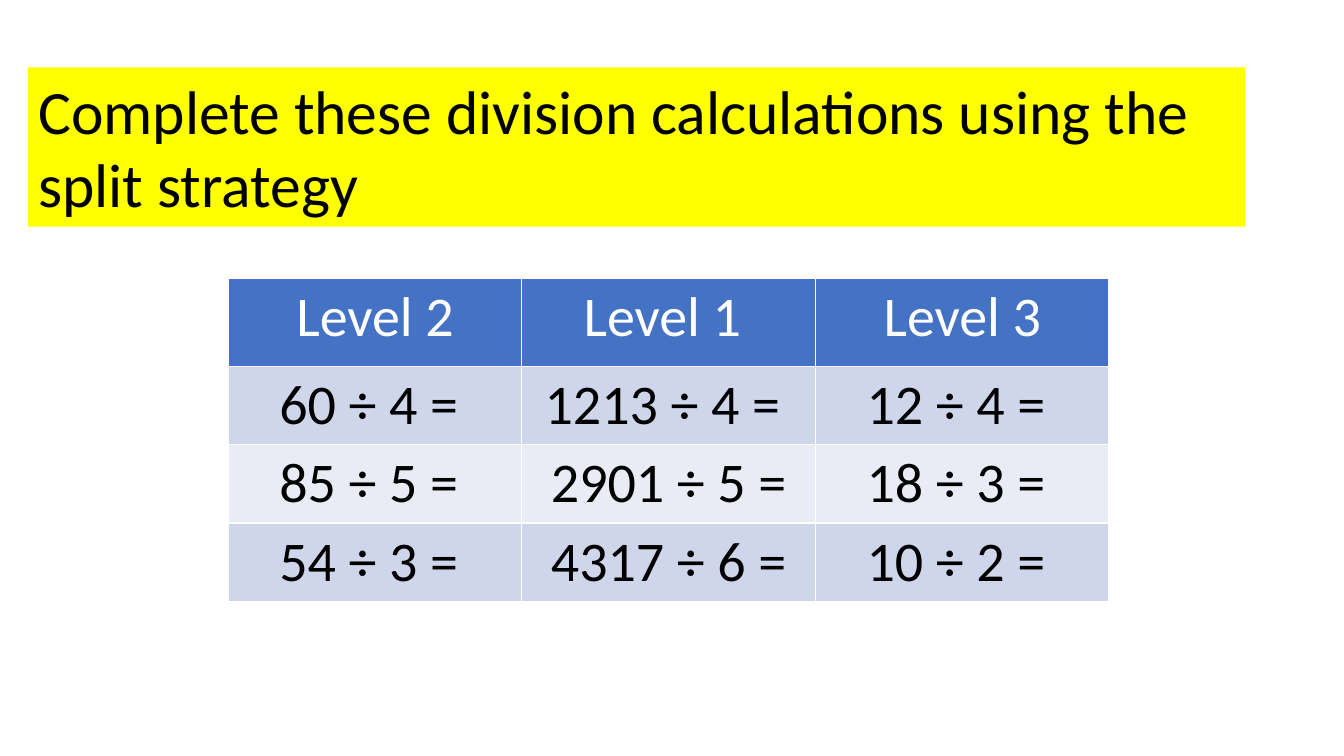
from pptx import Presentation
from pptx.dml.color import RGBColor
from pptx.enum.text import MSO_ANCHOR as Anchor, MSO_AUTO_SIZE as AutoSize, PP_ALIGN as Align
from pptx.util import Cm, Pt

# Content
TITLE = "Complete these division calculations using the split strategy"
ROWS = [
    ("Level 2", "Level 1 ", "Level 3"),
    ("60 ÷ 4 = ", "1213 ÷ 4 = ", "12 ÷ 4 = "),
    ("85 ÷ 5 = ", "2901 ÷ 5 =", "18 ÷ 3 = "),
    ("54 ÷ 3 = ", "4317 ÷ 6 =", "10 ÷ 2 = "),
]
COLORS = {
    "title": "FFFF00", "header": "4472C4", "odd": "CFD5EA", "even": "E9EBF5",
    "black": "000000", "white": "FFFFFF",
}
TITLE_BOX = (0.71, 1.7, 30.66, 4.01)
TABLE_LEFT, TABLE_TOP = 5.75, 7.02
COLUMN_WIDTH, HEADER_HEIGHT, ROW_HEIGHT = 7.4, 2.21, 1.94


def color(name):
    return RGBColor.from_string(COLORS[name])


def paint(item, name):
    item.fill.solid()
    item.fill.fore_color.rgb = color(name)


def write(frame, text, size, ink, align):
    para = frame.paragraphs[0]
    para.alignment = align
    para.line_spacing = 1.0
    span = para.add_run()
    span.text = text
    for key, value in {"name": "Calibri", "size": Pt(size), "bold": False}.items():
        setattr(span.font, key, value)
    span.font.color.rgb = color(ink)


deck = Presentation()
deck.slide_width, deck.slide_height = Cm(33.87), Cm(19.05)
page = deck.slides.add_slide(deck.slide_layouts[5])

# Title band
box = page.shapes.title
box.left, box.top, box.width, box.height = map(Cm, TITLE_BOX)
paint(box, "title")
frame_format = {"word_wrap": True, "auto_size": AutoSize.NONE, "vertical_anchor": Anchor.TOP}
for key, value in frame_format.items():
    setattr(box.text_frame, key, value)
write(box.text_frame, TITLE, 44, "black", Align.LEFT)

# Table of calculations
column_count = len(ROWS[0])
heights = [HEADER_HEIGHT] + [ROW_HEIGHT] * (len(ROWS) - 1)
table = page.shapes.add_table(
    len(ROWS), column_count, Cm(TABLE_LEFT), Cm(TABLE_TOP),
    Cm(COLUMN_WIDTH * column_count), Cm(sum(heights)),
).table
for column in table.columns:
    column.width = Cm(COLUMN_WIDTH)
for r, (texts, height) in enumerate(zip(ROWS, heights)):
    table.rows[r].height = Cm(height)
    fill = "header" if r == 0 else "odd" if r % 2 else "even"
    ink = "black" if r else "white"
    for c, text in enumerate(texts):
        cell = table.cell(r, c)
        paint(cell, fill)
        write(cell.text_frame, text, 40, ink, Align.CENTER)

deck.save("out.pptx")
